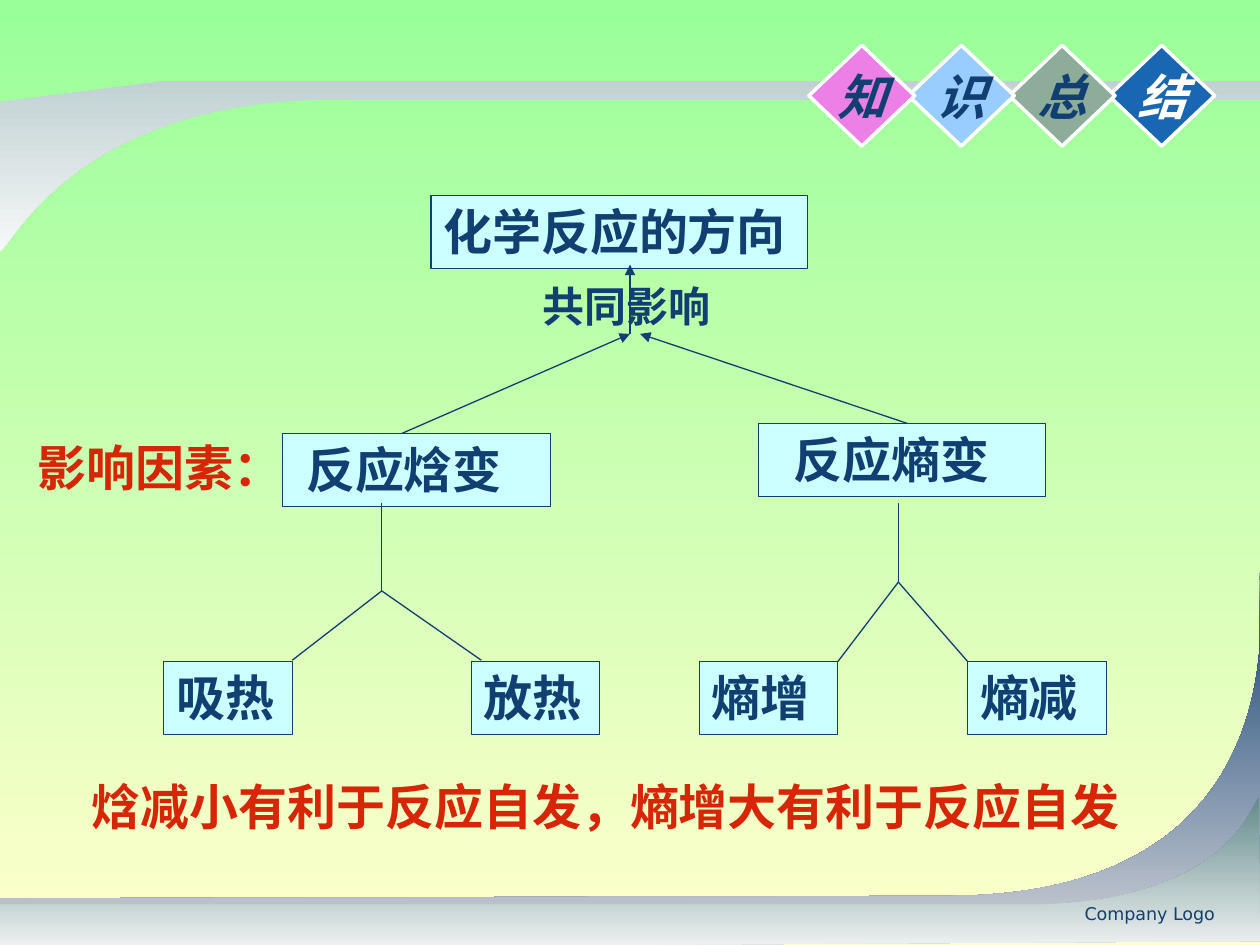
"""Build the summary slide on the direction of chemical reactions."""
from lxml import etree
from pptx import Presentation
from pptx import util as u
from pptx.dml.color import RGBColor
from pptx.enum import shapes, text
from pptx.oxml.ns import qn

Inches = u.Inches
NAVY, RED, CYAN, WHITE = "113F71", "D72507", "CCFFFF", "FFFFFF"
CJK = "Noto Sans CJK SC"


def rgb(value):
    return RGBColor.from_string(value)


def write(sp, words, size=28, color=NAVY, font=CJK, bold=True, italic=False,
          align=text.PP_ALIGN.LEFT, anchor=text.MSO_ANCHOR.TOP, wrap=True, left=0.1):
    tf = sp.text_frame
    frame = {"word_wrap": wrap, "vertical_anchor": anchor, "margin_left": Inches(left),
             "auto_size": text.MSO_AUTO_SIZE.NONE}
    for name, value in frame.items():
        setattr(tf, name, value)
    p = tf.paragraphs[0]
    p.alignment = align
    r = p.add_run()
    r.text = words
    style = {"size": u.Pt(size), "bold": bold, "italic": italic, "name": font}
    for name, value in style.items():
        setattr(r.font, name, value)
    r.font.color.rgb = rgb(color)
    etree.SubElement(r._r.get_or_add_rPr(), qn("a:ea")).set("typeface", CJK)


prs = Presentation()
prs.slide_width, prs.slide_height = Inches(10), Inches(7.5)
s = prs.slides.add_slide(prs.slide_layouts[6])

swooshes = [
    ([(10, 4.54), (9.96, 4.61), (10.44, 7.11), (7.52, 7.11), (0, 7.13), (0, 7.5), (10, 7.44)],
     1, ("113F71", "CFD1D7")),
    ([(9.99, 6.33), (9.95, 6.33), (9.79, 7.16), (8.2, 7.18), (0, 7.18), (0, 7.53), (10, 7.47)],
     1, ("648B8C", "EFF2F2")),
    ([(0, 0.81), (0, 1.99), (0.06, 2.02), (0.58, 0.74), (2.78, 0.79), (10, 0.79), (10, 0.64),
      (1.31, 0.64)], 2, ("C1D1D3", "F7F9F9")),
]
gradients = [(s.background.fill, ("99FF99", "FFFFCC"))]
for points, curve_at, colors in swooshes:
    points = [(Inches(x), Inches(y)) for x, y in points]
    builder = s.shapes.build_freeform(*points[0])
    builder.add_line_segments(points[1:], close=True)
    sp = builder.convert_to_shape()
    outline = next(sp._element.iter(qn("a:path")))
    steps = list(outline)[curve_at:curve_at + 3]
    curve = etree.Element(qn("a:cubicBezTo"))
    outline.insert(curve_at, curve)
    for step in steps:
        curve.append(step[0])
        outline.remove(step)
    sp.shadow.inherit = False
    sp.line.fill.background()
    gradients.append((sp.fill, colors))

for fill, colors in gradients:
    fill.gradient()
    fill.gradient_angle = 270
    for stop, color in zip(fill.gradient_stops, colors):
        stop.color.rgb = rgb(color)

boxes = [
    ("化学反应的方向", 3.42, 1.55, 2.99, 0.1),
    ("反应焓变", 2.24, 3.44, 2.13, 0.19),
    ("反应熵变", 6.02, 3.36, 2.28, 0.28),
    ("吸热", 1.3, 5.25, 1.02, 0.1),
    ("放热", 3.74, 5.25, 1.02, 0.1),
    ("熵增", 5.55, 5.25, 1.1, 0.1),
    ("熵减", 7.68, 5.25, 1.1, 0.1),
]
for words, x, y, w, left in boxes:
    sp = s.shapes.add_shape(shapes.MSO_SHAPE.RECTANGLE,
                            Inches(x), Inches(y), Inches(w), Inches(0.58))
    sp.shadow.inherit = False
    sp.fill.solid()
    sp.fill.fore_color.rgb = rgb(CYAN)
    sp.line.color.rgb = rgb(NAVY)
    sp.line.width = u.Pt(0.75)
    write(sp, words, left=left)

lines = [
    (5, 2.65, 5, 2.1, True),
    (3.19, 3.44, 5, 2.65, True),
    (7.2, 3.36, 5.08, 2.65, True),
    (3.03, 3.99, 3.03, 4.7, False),
    (3.03, 4.69, 2.32, 5.24, False),
    (3.03, 4.69, 3.82, 5.24, False),
    (7.13, 3.99, 7.13, 4.62, False),
    (7.13, 4.62, 6.65, 5.25, False),
    (7.13, 4.62, 7.68, 5.25, False),
]
for *ends, arrow in lines:
    cx = s.shapes.add_connector(shapes.MSO_CONNECTOR.STRAIGHT, *map(Inches, ends))
    cx.line.color.rgb = rgb(NAVY)
    cx.line.width = u.Pt(0.75)
    if arrow:
        etree.SubElement(cx.line._get_or_add_ln(), qn("a:tailEnd")).set("type", "triangle")
    etree.SubElement(cx._element.spPr, qn("a:effectLst"))

labels = [
    ("Company Logo", 6.57, 7.12, 3.17, 0.36,
     {"size": 10, "font": "DejaVu Sans", "bold": False, "align": text.PP_ALIGN.RIGHT}),
    ("影响因素：", 0.2, 3.42, 2.28, 0.57, {"color": RED}),
    ("共同影响", 4.21, 2.18, 1.73, 0.5, {"size": 24}),
    ("焓减小有利于反应自发，熵增大有利于反应自发", 0.63, 6.11, 8.78, 0.57, {"color": RED}),
]
for words, x, y, w, h, style in labels:
    write(s.shapes.add_textbox(Inches(x), Inches(y), Inches(w), Inches(h)), words, **style)

diamonds = [("结", 8.8, "1966B3", WHITE), ("总", 8.01, "8DAD9A", NAVY),
            ("识", 7.21, "99CCFF", NAVY), ("知", 6.42, "EC80E7", NAVY)]
for words, x, fill, color in diamonds:
    sp = s.shapes.add_shape(shapes.MSO_SHAPE.DIAMOND, Inches(x),
                            Inches(0.36), Inches(0.84), Inches(0.8))
    sp.shadow.inherit = False
    sp.fill.solid()
    sp.fill.fore_color.rgb = rgb(fill)
    sp.line.color.rgb = rgb(WHITE)
    sp.line.width = u.Pt(2)
    write(sp, words, color=color, font="Times New Roman", italic=True, wrap=False,
          align=text.PP_ALIGN.CENTER, anchor=text.MSO_ANCHOR.MIDDLE)

prs.save("out.pptx")
